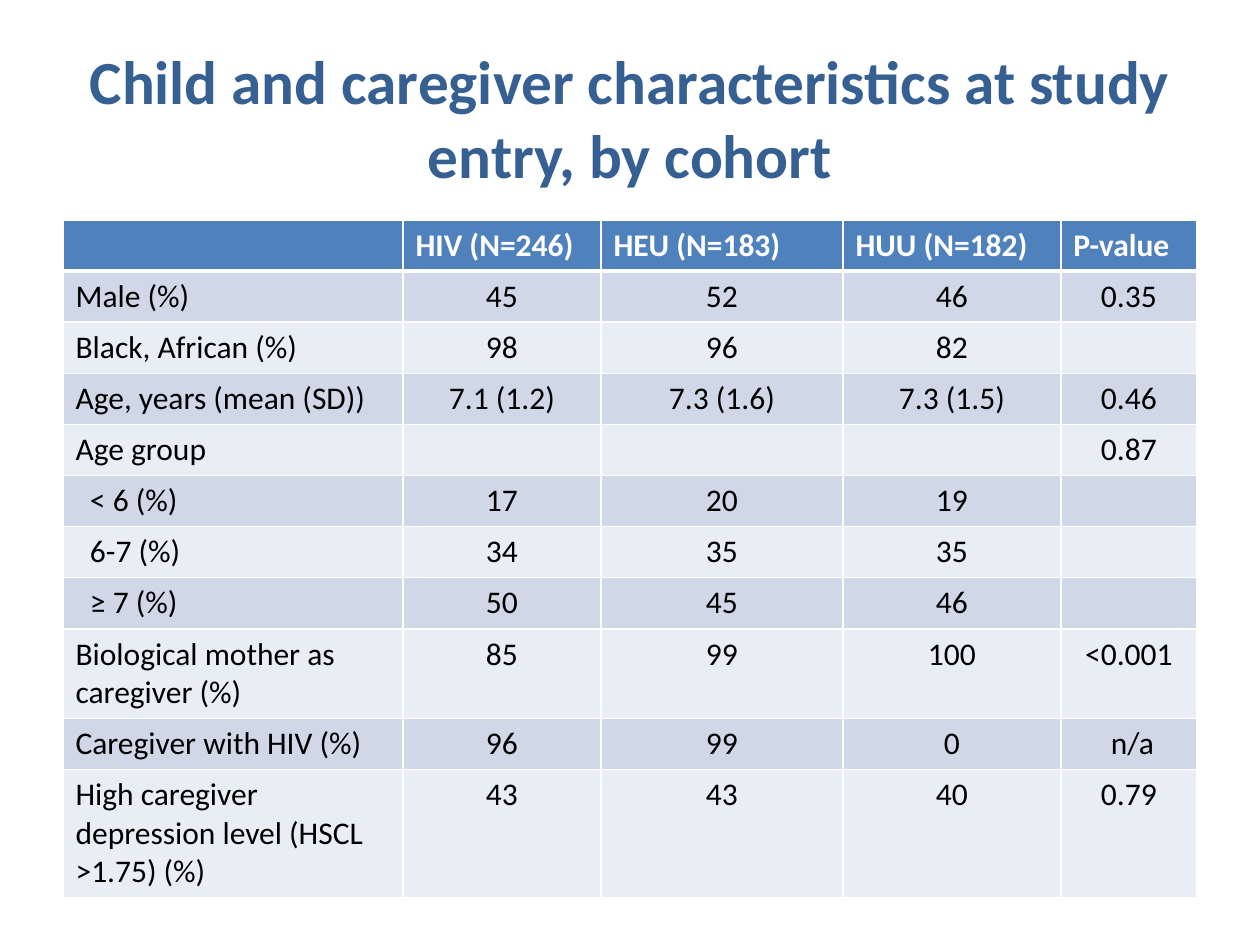
from lxml.etree import SubElement
from pptx import Presentation
from pptx.dml.color import RGBColor
from pptx.enum.text import MSO_ANCHOR, MSO_AUTO_SIZE, PP_ALIGN
from pptx.oxml.ns import qn
from pptx.util import Pt

PX = 914400 / 126
FONT = "Calibri"
WHITE = RGBColor(0xFF, 0xFF, 0xFF)
BLACK = RGBColor(0x00, 0x00, 0x00)
TITLE_BLUE = RGBColor(0x37, 0x60, 0x92)
HEADER_BLUE = RGBColor(0x4F, 0x81, 0xBD)
BANDS = (RGBColor(0xE9, 0xED, 0xF4), RGBColor(0xD0, 0xD8, 0xE8))

COLUMN_WIDTHS = (340, 198, 242, 218, 136)
ROW_HEIGHT = 51
CELL_MARGIN = 13
SUBGROUP_INDENT = 14
SUBGROUPS = ("< 6 (%)", "6-7 (%)", "≥ 7 (%)")
ROWS = (
    ("", "HIV (N=246)", "HEU (N=183)", "HUU (N=182)", "P-value"),
    ("Male (%)", "45", "52", "46", "0.35"),
    ("Black, African (%)", "98", "96", "82", ""),
    ("Age, years (mean (SD))", "7.1 (1.2)", "7.3 (1.6)", "7.3 (1.5)", "0.46"),
    ("Age group", "", "", "", "0.87"),
    (SUBGROUPS[0], "17", "20", "19", ""),
    (SUBGROUPS[1], "34", "35", "35", ""),
    (SUBGROUPS[2], "50", "45", "46", ""),
    ("Biological mother as caregiver (%)", "85", "99", "100", "<0.001"),
    ("Caregiver with HIV (%)", "96", "99", "0", " n/a"),
    ("High caregiver depression level (HSCL >1.75) (%)", "43", "43", "40", "0.79"),
)


def emu(pixels):
    return round(pixels * PX)


def add_text(para, text, size, color, bold):
    span = para.add_run()
    span.text = text
    span.font.name = FONT
    span.font.size = Pt(size)
    span.font.bold = bold
    span.font.color.rgb = color


def set_borders(cell, bottom_width):
    properties = cell._tc.get_or_add_tcPr()
    for side, width in (("L", 1), ("R", 1), ("T", 1), ("B", bottom_width)):
        line = SubElement(properties, qn(f"a:ln{side}"), w=str(Pt(width)))
        fill = SubElement(line, qn("a:solidFill"))
        SubElement(fill, qn("a:srgbClr"), val=str(WHITE))


def add_title(page, left, top, width, height):
    box = page.shapes.title
    box.left, box.top, box.width, box.height = map(emu, (left, top, width, height))
    frame = box.text_frame
    frame.word_wrap = True
    frame.auto_size = MSO_AUTO_SIZE.NONE
    frame.vertical_anchor = MSO_ANCHOR.MIDDLE
    para = frame.paragraphs[0]
    para.alignment = PP_ALIGN.CENTER
    add_text(para, "Child and caregiver characteristics at study entry, by cohort",
             35, TITLE_BLUE, True)


def format_cell(cell, text, row, column):
    header = row == 0
    set_borders(cell, 3 if header else 1)
    cell.fill.solid()
    cell.fill.fore_color.rgb = HEADER_BLUE if header else BANDS[row % 2]
    if text in SUBGROUPS:
        cell.margin_left = emu(CELL_MARGIN + SUBGROUP_INDENT)
    para = cell.text_frame.paragraphs[0]
    if column and not header:
        para.alignment = PP_ALIGN.CENTER
    if text:
        add_text(para, text, 18, WHITE if header else BLACK, header)


def add_characteristics_table(page, left, top):
    frame = page.shapes.add_table(
        len(ROWS), len(COLUMN_WIDTHS), emu(left), emu(top),
        emu(sum(COLUMN_WIDTHS)), emu(ROW_HEIGHT * len(ROWS)))
    table = frame.table
    for column, width in zip(table.columns, COLUMN_WIDTHS):
        column.width = emu(width)
    for row, texts in enumerate(ROWS):
        table.rows[row].height = emu(ROW_HEIGHT)
        for column, text in enumerate(texts):
            format_cell(table.cell(row, column), text, row, column)


def main():
    deck = Presentation()
    deck.slide_width, deck.slide_height = emu(1260), emu(945)
    page = deck.slides.add_slide(deck.slide_layouts[5])
    add_title(page, 63, 38, 1134, 158)
    add_characteristics_table(page, 63, 220)
    deck.save("out.pptx")


if __name__ == "__main__":
    main()
